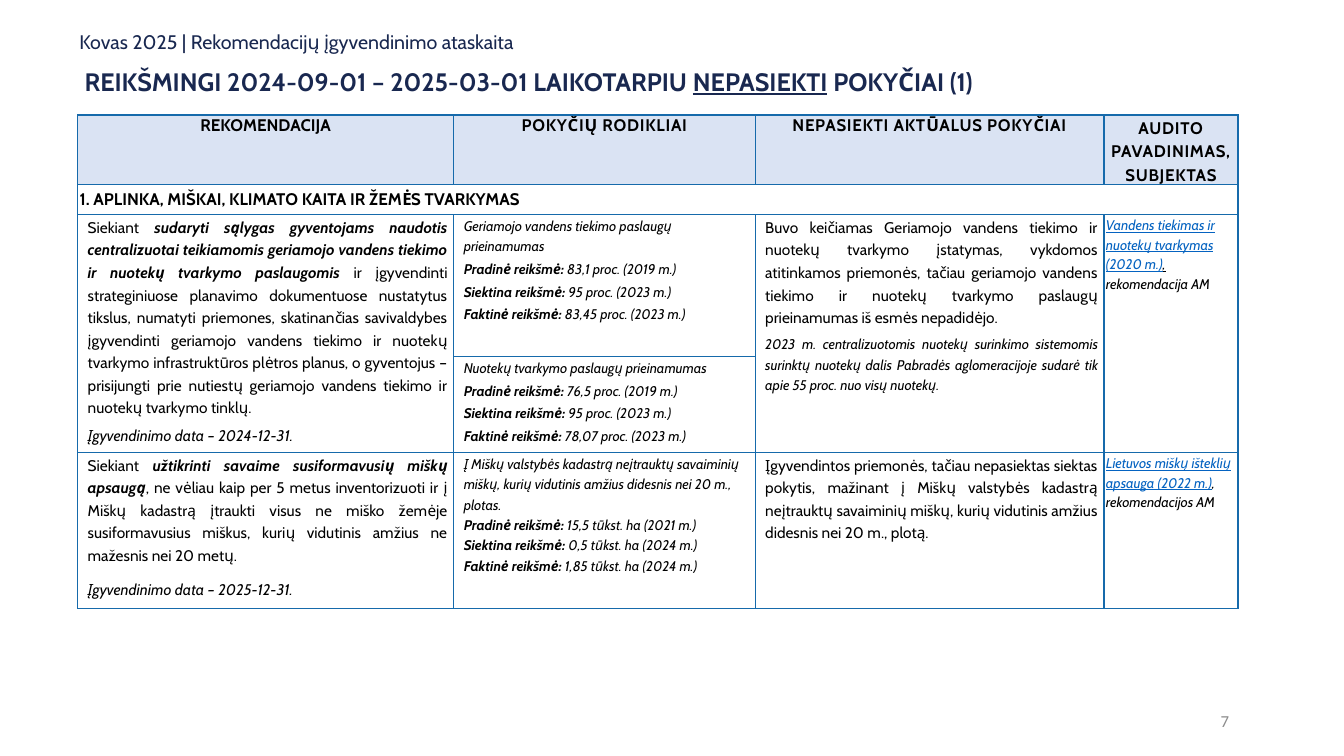
"""Builds the slide on audit recommendations whose changes were not achieved."""
from dataclasses import dataclass

from lxml import etree
from pptx import Presentation
from pptx import util as u
from pptx.dml.color import RGBColor
from pptx.enum import text
from pptx.oxml.ns import qn


@dataclass(frozen=True)
class Theme:
    font: str = "Cabin"
    number_font: str = "Calibri"
    navy: str = "192850"
    black: str = "000000"
    grey: str = "8C8C8C"
    link: str = "0563C1"
    border: str = "166AAB"
    header: str = "DAE3F3"
    white: str = "FFFFFF"
    kicker: int = 14
    title: int = 18
    heading: int = 12
    body: int = 11
    detail: int = 10


theme = Theme()
LEFT, CENTER, RIGHT, JUSTIFY = (text.PP_ALIGN.LEFT, text.PP_ALIGN.CENTER,
                                text.PP_ALIGN.RIGHT, text.PP_ALIGN.JUSTIFY)


def write(para, spans, size, color=theme.black, font=theme.font, spacing=0):
    """Add (words, style) spans; style letters are b, i, u, l for link and n for a break after."""
    for words, style in spans:
        span = para.add_run()
        span.text = words
        span.font.name = font
        span.font.size = u.Pt(size)
        span.font.bold = "b" in style
        span.font.italic = "i" in style
        span.font.underline = "u" in style
        span.font.color.rgb = RGBColor.from_string(theme.link if "l" in style else color)
        if spacing:
            span.font._element.set("spc", str(spacing))
        if "n" in style:
            para.add_line_break()
            etree.SubElement(para._p[-1], qn("a:rPr"), sz=str(size * 100))


def fill_cell(cell, paragraphs, indent=0.08):
    """Write (alignment, size, line spacing, space before, spans) paragraphs into a cell."""
    for number, (align, size, leading, before, spans) in enumerate(paragraphs):
        para = cell.text_frame.paragraphs[0] if number == 0 else cell.text_frame.add_paragraph()
        para.alignment = align
        para.line_spacing = leading
        para.space_before = u.Pt(before if number else 0)
        para.space_after = u.Pt(2)
        if indent:
            props = para._p.get_or_add_pPr()
            props.set("marL", str(u.Inches(indent)))
            props.set("marR", str(u.Inches(0.04)))
        write(para, spans, size)


deck = Presentation()
deck.slide_width, deck.slide_height = u.Inches(13.33), u.Inches(7.5)
page = deck.slides.add_slide(deck.slide_layouts[6])

labels = [
    ((0.69, 0.27, 11.5, 0.49), LEFT, theme.kicker, theme.navy, theme.font,
     [("Kovas 2025 | Rekomendacijų įgyvendinimo ataskaita", "")]),
    ((0.74, 0.61, 11.25, 0.4), LEFT, theme.title, theme.navy, theme.font,
     [("REIKŠMINGI 2024-09-01 – 2025-03-01 LAIKOTARPIU ", "b"),
      ("NEPASIEKTI", "bu"), (" POKYČIAI (1)", "b")]),
    ((9.42, 6.95, 2.87, 0.4), RIGHT, theme.heading, theme.grey, theme.number_font, [("7", "")]),
]
for place, align, size, color, font, spans in labels:
    box = page.shapes.add_textbox(*map(u.Inches, place))
    box.text_frame.word_wrap = True
    if align == RIGHT:
        box.text_frame.vertical_anchor = text.MSO_ANCHOR.MIDDLE
    para = box.text_frame.paragraphs[0]
    para.alignment = align
    if size == theme.kicker:
        para.line_spacing = 0.9
    write(para, spans, size, color, font)

widths = [3.73, 2.99, 3.46, 1.33]
heights = [0.68, 0.3, 1.41, 0.95, 1.55]
table = page.shapes.add_table(len(heights), len(widths), u.Inches(0.77), u.Inches(1.14),
                              u.Inches(sum(widths)), u.Inches(sum(heights))).table
table.first_row = table.horz_banding = False
for column, width in zip(table.columns, widths):
    column.width = u.Inches(width)
for row_number, (row, height) in enumerate(zip(table.rows, heights)):
    row.height = u.Inches(height)
    for cell in row.cells:
        cell.margin_left = cell.margin_right = u.Inches(0.02)
        cell.margin_top = cell.margin_bottom = 0
        for side in ("a:lnL", "a:lnR", "a:lnT", "a:lnB"):
            line = etree.SubElement(cell._tc.get_or_add_tcPr(), qn(side), w=str(u.Pt(1)))
            paint = etree.SubElement(line, qn("a:solidFill"))
            etree.SubElement(paint, qn("a:srgbClr"), val=theme.border)
        cell.fill.solid()
        cell.fill.fore_color.rgb = RGBColor.from_string(theme.white if row_number else theme.header)

table.cell(1, 0).merge(table.cell(1, 3))
for column in (0, 2, 3):
    table.cell(2, column).merge(table.cell(3, column))

headings = ["REKOMENDACIJA", "POKYČIŲ RODIKLIAI", "NEPASIEKTI AKTŪALUS POKYČIAI",
            "AUDITO PAVADINIMAS, SUBJEKTAS"]
for column, heading in enumerate(headings):
    para = table.cell(0, column).text_frame.paragraphs[0]
    para.alignment = CENTER
    if column == 3:
        para.line_spacing = 1.15
        para.space_after = u.Pt(2)
    write(para, [(heading, "b")], theme.heading, spacing=50 if column else 0)

section = table.cell(1, 0)
section.vertical_anchor = text.MSO_ANCHOR.MIDDLE
write(section.text_frame.paragraphs[0],
      [("1. APLINKA, MIŠKAI, KLIMATO KAITA IR ŽEMĖS TVARKYMAS", "b")], theme.heading)

recommendations = [
    (2, "sudaryti sąlygas gyventojams naudotis centralizuotai teikiamomis geriamojo vandens "
        "tiekimo ir nuotekų tvarkymo paslaugomis ",
     "ir įgyvendinti strateginiuose planavimo dokumentuose nustatytus tikslus, numatyti "
     "priemones, skatinančias savivaldybes įgyvendinti geriamojo vandens tiekimo ir nuotekų "
     "tvarkymo infrastruktūros plėtros planus, o gyventojus – prisijungti prie nutiestų "
     "geriamojo vandens tiekimo ir nuotekų tvarkymo tinklų.", 2, "2024-12-31"),
    (4, "užtikrinti savaime susiformavusių miškų apsaugą",
     ", ne vėliau kaip per 5 metus inventorizuoti ir į Miškų kadastrą įtraukti visus ne miško "
     "žemėje susiformavusius miškus, kurių vidutinis amžius ne mažesnis nei 20 metų.",
     6, "2025-12-31"),
]
for row, aim, rest, before, date in recommendations:
    fill_cell(table.cell(row, 0), [
        (JUSTIFY, theme.body, 1.2, 2, [("Siekiant ", ""), (aim, "bi"), (rest, "")]),
        (JUSTIFY, theme.body, 1.2, before, [(f"Įgyvendinimo data – {date}.", "i")])])

measures = ["Pradinė reikšmė:", "Siektina reikšmė:", "Faktinė reikšmė:"]
indicators = [
    (2, "Geriamojo vandens tiekimo paslaugų prieinamumas",
     ["83,1 proc. (2019 m.)", "95 proc. (2023 m.)", "83,45 proc. (2023 m.)"]),
    (3, "Nuotekų tvarkymo paslaugų prieinamumas",
     ["76,5 proc. (2019 m.)", "95 proc. (2023 m.)", "78,07 proc. (2023 m.)"]),
]
for row, name, values in indicators:
    fill_cell(table.cell(row, 1), [(LEFT, theme.detail, 1.2, 2, [(name, "i")])] + [
        (LEFT, theme.detail, 1.0, 2, [(measure, "bi"), (f" {value}", "i")])
        for measure, value in zip(measures, values)])

forest = [("Į Miškų valstybės kadastrą neįtrauktų savaiminių miškų, kurių vidutinis amžius "
           "didesnis nei 20 m., plotas.", "in")]
forest_values = ["15,5 tūkst. ha (2021 m.)", "0,5 tūkst. ha (2024 m.)", "1,85 tūkst. ha (2024 m.)"]
for measure, value, style in zip(measures, forest_values, ("in", "in", "i")):
    forest += [(measure, "bi"), (f" {value}", style)]
fill_cell(table.cell(4, 1), [(LEFT, theme.detail, 1.2, 2, forest)])

fill_cell(table.cell(2, 2), [
    (JUSTIFY, theme.body, 1.2, 2, [(
        "Buvo keičiamas Geriamojo vandens tiekimo ir nuotekų tvarkymo įstatymas, vykdomos "
        "atitinkamos priemonės, tačiau geriamojo vandens tiekimo ir nuotekų tvarkymo paslaugų "
        "prieinamumas iš esmės nepadidėjo.", "")]),
    (JUSTIFY, theme.detail, 1.2, 2, [(
        "2023 m. centralizuotomis nuotekų surinkimo sistemomis surinktų nuotekų dalis Pabradės "
        "aglomeracijoje sudarė tik apie 55 proc. nuo visų nuotekų.", "i")])])
fill_cell(table.cell(4, 2), [(JUSTIFY, theme.body, 1.2, 2, [(
    "Įgyvendintos priemonės, tačiau nepasiektas siektas pokytis, mažinant į Miškų valstybės "
    "kadastrą neįtrauktų savaiminių miškų, kurių vidutinis amžius didesnis nei 20 m., plotą.", "")])])

audits = [
    (2, [("Vandens tiekimas ir nuotekų tvarkymas (2020 m.)", "iul"), (", ", "iu"),
         ("rekomendacija AM", "i")]),
    (4, [("Lietuvos miškų išteklių apsauga (2022 m.)", "iul"), (", rekomendacijos AM", "i")]),
]
for row, spans in audits:
    fill_cell(table.cell(row, 3), [(LEFT, theme.detail, 1.15, 2, spans)], indent=0)

deck.save("out.pptx")
